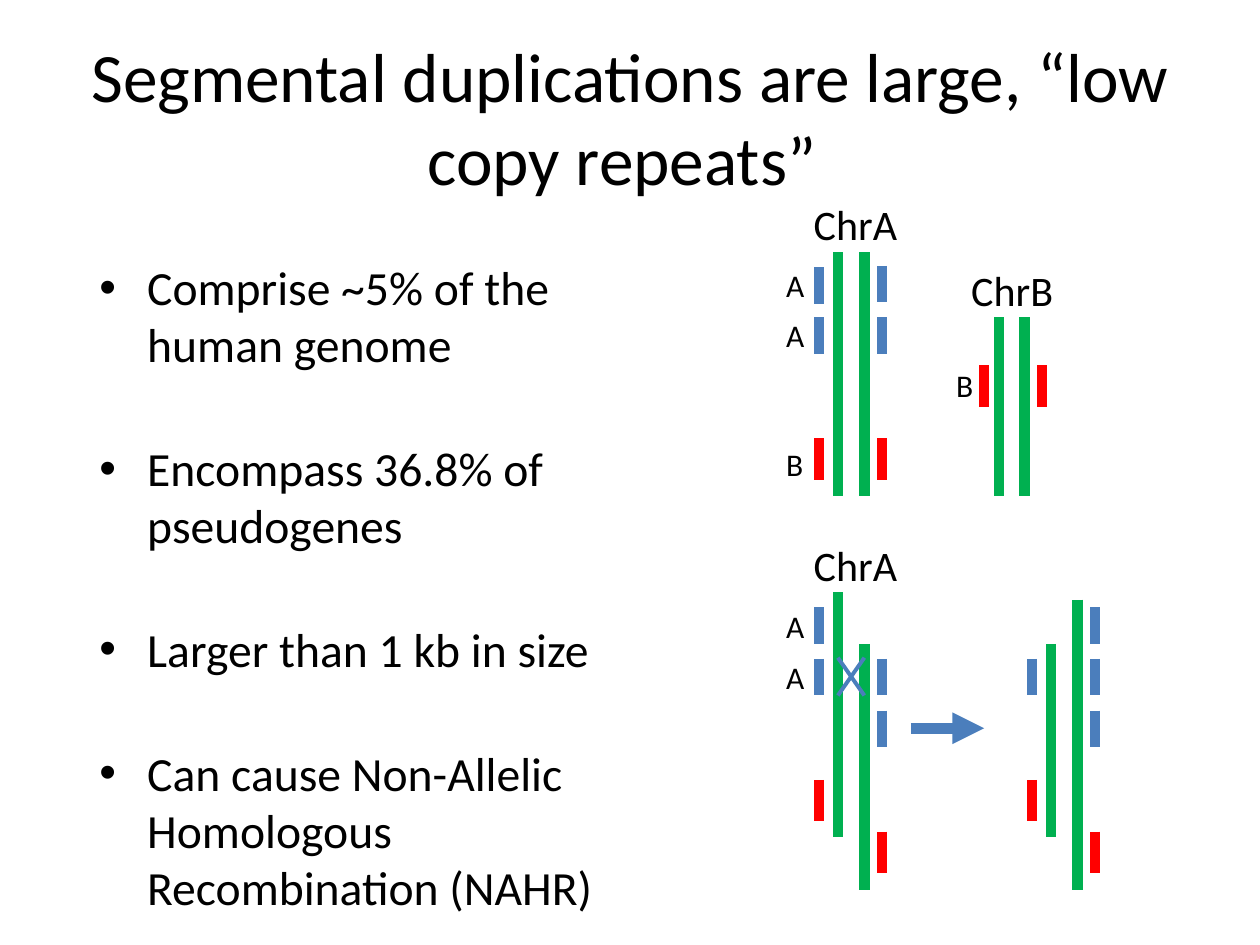
from lxml import etree
from pptx import Presentation
from pptx.dml.color import RGBColor
from pptx.enum import shapes, text
from pptx.oxml import ns
from pptx.util import Inches, Pt

BLACK = RGBColor(0x00, 0x00, 0x00)
GREEN = RGBColor(0x00, 0xB0, 0x50)
BLUE = RGBColor(0x4B, 0x7E, 0xBC)
RED = RGBColor(0xFF, 0x00, 0x00)
FONT = "Calibri"
REPEAT_LENGTH = {BLUE: 0.29, RED: 0.33}
POINTS = [
    "Comprise ~5% of the human genome",
    "Encompass 36.8% of pseudogenes",
    "Larger than 1 kb in size",
    "Can cause Non-Allelic Homologous Recombination (NAHR)",
]


def style(paragraph, size):
    """Apply the slide's typeface to a paragraph."""
    paragraph.font.name = FONT
    paragraph.font.size = Pt(size)
    paragraph.font.color.rgb = BLACK


def add_line(parts, start, end, color, width=6):
    """Draw a flat straight line between two points."""
    line = parts.add_connector(
        shapes.MSO_CONNECTOR.STRAIGHT, *(Inches(v) for v in (*start, *end))
    )
    line.line.color.rgb = color
    line.line.width = Pt(width)
    etree.SubElement(line._element.spPr, ns.qn("a:effectLst"))
    return line


def add_label(parts, wording, left, top, width, height, size):
    """Place a one-line label that does not wrap."""
    label = parts.add_textbox(*(Inches(v) for v in (left, top, width, height)))
    label.text_frame.word_wrap = False
    paragraph = label.text_frame.paragraphs[0]
    paragraph.text = wording
    style(paragraph, size)


def add_title(slide, left, top, width, height):
    """Place the centred slide title."""
    title = slide.shapes.add_textbox(*(Inches(v) for v in (left, top, width, height)))
    title.text_frame.word_wrap = True
    title.text_frame.vertical_anchor = text.MSO_ANCHOR.MIDDLE
    paragraph = title.text_frame.paragraphs[0]
    paragraph.text = "Segmental duplications are large, “low copy repeats” "
    paragraph.alignment = text.PP_ALIGN.CENTER
    style(paragraph, 39.6)


def add_points(slide, left, top, width, height):
    """Place the bulleted facts, spaced a line apart."""
    body = slide.shapes.add_textbox(*(Inches(v) for v in (left, top, width, height)))
    frame = body.text_frame
    frame.word_wrap = True
    for index, point in enumerate(POINTS):
        paragraph = frame.add_paragraph() if index else frame.paragraphs[0]
        paragraph.text = point
        paragraph.space_before = Pt(38 if index else 0)
        style(paragraph, 27.2)
        properties = paragraph._p.get_or_add_pPr()
        properties.set("marL", str(Inches(0.38)))
        properties.set("indent", str(Inches(-0.38)))
        etree.SubElement(properties, ns.qn("a:buFont"), typeface="Arial")
        bullet = etree.SubElement(properties, ns.qn("a:buChar"), char="•")
        properties.remove(bullet)
        properties.find(ns.qn("a:buFont")).addnext(bullet)
        defaults = properties.find(ns.qn("a:defRPr"))
        if defaults is not None:
            properties.append(defaults)


def add_chromosomes(parts, left, top, strands, repeats, name=None, letters=()):
    """Draw strands and their flanking repeats from a top-left corner."""
    for x, start, end in strands:
        add_line(parts, (left + x, top + start), (left + x, top + end), GREEN)
    for x, start, color in repeats:
        end = start + REPEAT_LENGTH[color]
        add_line(parts, (left + x, top + start), (left + x, top + end), color)
    if name:
        add_label(parts, name, left - 0.14, top - 0.47, 0.87, 0.5, 24)
    for letter, x, y in letters:
        add_label(parts, letter, left + x, top + y, 0.35, 0.4, 18)


def add_normal_pairs(slide, left, top):
    """Draw the aligned ChrA and ChrB pairs."""
    add_chromosomes(
        slide.shapes, left, top,
        [(0.15, 0, 1.94), (0.36, 0, 1.94)],
        [(0, 0.12, BLUE), (0.5, 0.11, BLUE)]
        + [(x, y, color) for y, color in ((0.52, BLUE), (1.48, RED)) for x in (0, 0.5)],
        "ChrA",
        [("A", -0.36, 0.06), ("A", -0.36, 0.46), ("B", -0.36, 1.48)],
    )
    add_chromosomes(
        slide.shapes, left + 1.25, top + 0.52,
        [(0.18, 0, 1.42), (0.38, 0, 1.42)],
        [(0.06, 0.38, RED), (0.52, 0.38, RED)],
        "ChrB",
        [("B", -0.26, 0.34)],
    )


def add_misaligned_pair(slide, left, top):
    """Draw the shifted ChrA pair with its crossover."""
    parts = slide.shapes.add_group_shape().shapes
    add_chromosomes(
        parts, left, top,
        [(0.15, 0, 1.94), (0.36, 0.41, 2.36)],
        [(0, 0.12, BLUE), (0, 0.53, BLUE), (0, 1.49, RED),
         (0.5, 0.53, BLUE), (0.5, 0.94, BLUE), (0.5, 1.9, RED)],
        "ChrA",
        [("A", -0.36, 0.07), ("A", -0.36, 0.47)],
    )
    for start, end in ((0.15, 0.36), (0.36, 0.15)):
        add_line(parts, (left + start, top + 0.52), (left + end, top + 0.82), BLUE, 2.25)


def add_recombined_pair(slide, left, top):
    """Draw the arrow and the unequal pair it leads to."""
    parts = slide.shapes.add_group_shape().shapes
    arrow = add_line(parts, (left, top + 1.08), (left + 0.58, top + 1.08), BLUE)
    etree.SubElement(arrow.line._get_or_add_ln(), ns.qn("a:tailEnd"), type="triangle")
    add_chromosomes(
        parts, left + 0.96, top,
        [(0.15, 0.41, 1.94), (0.36, 0.06, 2.36)],
        [(0, 0.53, BLUE), (0, 1.49, RED), (0.5, 0.12, BLUE),
         (0.5, 0.53, BLUE), (0.5, 0.94, BLUE), (0.5, 1.9, RED)],
    )


def main():
    """Build the slide and save it."""
    deck = Presentation()
    deck.slide_width, deck.slide_height = Inches(10), Inches(7.5)
    slide = deck.slides.add_slide(deck.slide_layouts[6])
    add_title(slide, 0.5, 0.3, 9, 1.25)
    add_points(slide, 0.69, 2, 4.31, 4.76)
    add_normal_pairs(slide, 6.5, 2)
    add_misaligned_pair(slide, 6.5, 4.7)
    add_recombined_pair(slide, 7.23, 4.7)
    deck.save("out.pptx")


if __name__ == "__main__":
    main()
